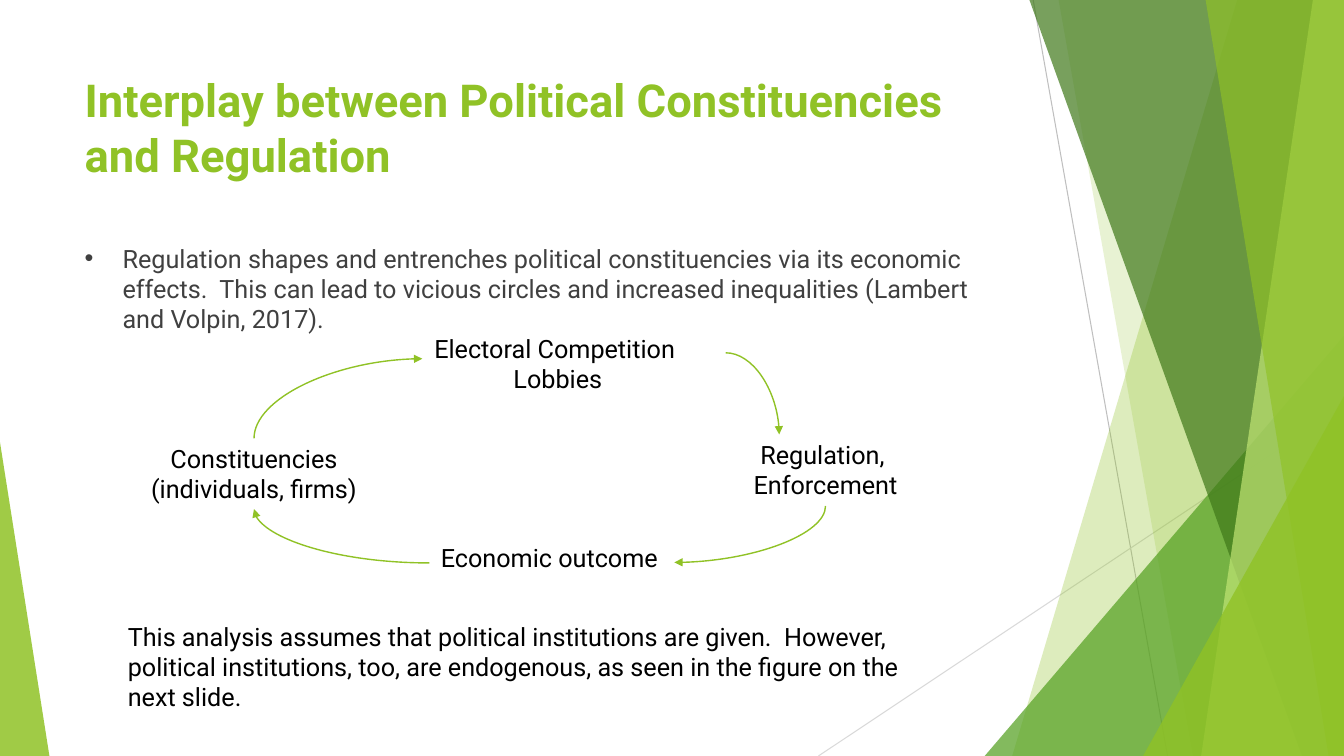
from lxml.etree import SubElement
from pptx import Presentation
from pptx.dml.color import RGBColor
from pptx.enum.shapes import MSO_CONNECTOR, MSO_SHAPE
from pptx.enum.text import MSO_ANCHOR, MSO_AUTO_SIZE, PP_ALIGN
from pptx.oxml.ns import qn
from pptx.util import Pt

LIME = RGBColor(0x90, 0xC2, 0x26)
GREEN = RGBColor(0x54, 0xA0, 0x21)
FOREST = RGBColor(0x3F, 0x78, 0x19)
PALE_LIME = RGBColor(0xC0, 0xE4, 0x74)
DARK_GRAY = RGBColor(0x40, 0x40, 0x40)
MID_GRAY = RGBColor(0xBF, 0xBF, 0xBF)
LIGHT_GRAY = RGBColor(0xD9, 0xD9, 0xD9)
BLACK = RGBColor(0, 0, 0)
WIDTH, HEIGHT = 960, 540
FACET_TOP = -0.6


def write(shape, lines, size, color, bold=False, align=PP_ALIGN.LEFT):
    frame = shape.text_frame
    frame.word_wrap = True
    frame.vertical_anchor = MSO_ANCHOR.TOP
    frame.text = lines
    for paragraph in frame.paragraphs:
        paragraph.alignment = align
        paragraph.font.name = "Roboto"
        paragraph.font.size = Pt(size)
        paragraph.font.bold = bold
        paragraph.font.color.rgb = color


def draw_line(kind, start, end, color, weight):
    line = slide.shapes.add_connector(kind, *map(Pt, start + end))
    line.line.color.rgb = color
    line.line.width = Pt(weight)
    SubElement(line._element.spPr, qn("a:effectLst"))
    return line


deck = Presentation()
deck.slide_width, deck.slide_height = Pt(WIDTH), Pt(HEIGHT)
slide = deck.slides.add_slide(deck.slide_layouts[1])

# Background decoration
draw_line(MSO_CONNECTOR.STRAIGHT, (738, 0), (834, HEIGHT), MID_GRAY, 0.75)
draw_line(MSO_CONNECTOR.STRAIGHT, (WIDTH, 290), (584.6, HEIGHT), LIGHT_GRAY, 0.75)

# Facets give top and bottom x of their left edge; triangles give
# left, top, width and the position of the apex.
decorations = [
    ((884.2, 722.9), LIME, 30),
    ((756, 851.8), LIME, 20),
    ((703.4, 239.8, 256.6, 1), GREEN, 72),
    ((735.1, 929.5), FOREST, 70),
    ((938.2, 858.2), PALE_LIME, 70),
    ((861.1, 949), LIME, 65),
    ((816.5, 283, 143.5, 1), LIME, 80),
    ((0, 316, 35.3, 0), LIME, 85),
]
for geometry, color, opacity in decorations:
    if len(geometry) == 2:
        top_x, bottom_x = geometry
        outline = slide.shapes.build_freeform(top_x, FACET_TOP, scale=Pt(1))
        outline.add_line_segments(
            [(WIDTH, FACET_TOP), (WIDTH, HEIGHT), (bottom_x, HEIGHT)], close=True)
        piece = outline.convert_to_shape()
    else:
        left, top, width, apex = geometry
        piece = slide.shapes.add_shape(
            MSO_SHAPE.ISOSCELES_TRIANGLE, Pt(left), Pt(top), Pt(width), Pt(HEIGHT - top))
        piece.adjustments[0] = apex
    piece.shadow.inherit = False
    piece.line.fill.background()
    piece.fill.solid()
    piece.fill.fore_color.rgb = color
    tint = piece._element.spPr.find(qn("a:solidFill"))[0]
    SubElement(tint, qn("a:alpha"), val=str(opacity * 1000))

# Title and bullet, placed in front of the decoration
title, body = slide.shapes.title, slide.placeholders[1]
for placeholder, top, height in ((title, 48.2, 66.2), (body, 170, 90)):
    placeholder.left, placeholder.top = Pt(53.3), Pt(top)
    placeholder.width, placeholder.height = Pt(676.8), Pt(height)
    placeholder.text_frame.auto_size = MSO_AUTO_SIZE.NONE
    slide.shapes._spTree.append(placeholder._element)

write(title, "Interplay between Political Constituencies and Regulation", 32.4, LIME, bold=True)

bullet = body.text_frame.paragraphs[0]
bullet.space_before = Pt(10)
bullet_format = bullet._p.get_or_add_pPr()
bullet_format.set("marL", str(Pt(27)))
bullet_format.set("indent", str(Pt(-27)))
SubElement(SubElement(bullet_format, qn("a:buClr")), qn("a:srgbClr"), val=str(LIME))
SubElement(bullet_format, qn("a:buSzPct"), val="80000")
SubElement(bullet_format, qn("a:buChar"), char="▶")
write(body, "Regulation shapes and entrenches political constituencies via its economic effects.  "
            "This can lead to vicious circles and increased inequalities (Lambert and Volpin, 2017).",
      18, DARK_GRAY)

# Stages of the cycle and the closing remark
texts = [
    ("Electoral Competition \nLobbies", 288, 234.7, 221, 51, PP_ALIGN.CENTER),
    ("Economic outcome", 306.7, 383.8, 171.4, 29, PP_ALIGN.CENTER),
    ("Constituencies\n(individuals, firms)", 97.9, 313.2, 167, 51, PP_ALIGN.CENTER),
    ("Regulation, \nEnforcement", 529.2, 310.3, 121, 51, PP_ALIGN.CENTER),
    ("This analysis assumes that political institutions are given.  However, political "
     "institutions, too, are endogenous, as seen in the figure on the next slide.",
     84.2, 440, 603.4, 72.7, PP_ALIGN.LEFT),
]
for words, left, top, width, height, align in texts:
    box = slide.shapes.add_textbox(Pt(left), Pt(top), Pt(width), Pt(height))
    write(box, words, 18, BLACK, align=align)
    box.text_frame.auto_size = MSO_AUTO_SIZE.SHAPE_TO_FIT_TEXT

# Quarter-curve arrows: unrotated left, top, width, height, then rotation and flip
arrows = [
    (213.1, 224.6, 56.9, 120.2, 90, True),
    (518.4, 252, 38.2, 58.3, 0, False),
    (515.5, 327.6, 40.3, 108, 90, False),
    (181.4, 363.6, 125.3, 38.5, 180, False),
]
for left, top, width, height, rotation, flipped in arrows:
    arrow = draw_line(MSO_CONNECTOR.CURVE, (left, top), (left + width, top + height), LIME, 1)
    properties = arrow._element.spPr
    properties.find(qn("a:prstGeom")).set("prst", "curvedConnector2")
    transform = properties.find(qn("a:xfrm"))
    transform.set("rot", str(rotation * 60000))
    if flipped:
        transform.set("flipH", "1")
        transform.set("flipV", "1")
    SubElement(properties.find(qn("a:ln")), qn("a:tailEnd"), type="triangle")

deck.save("out.pptx")
